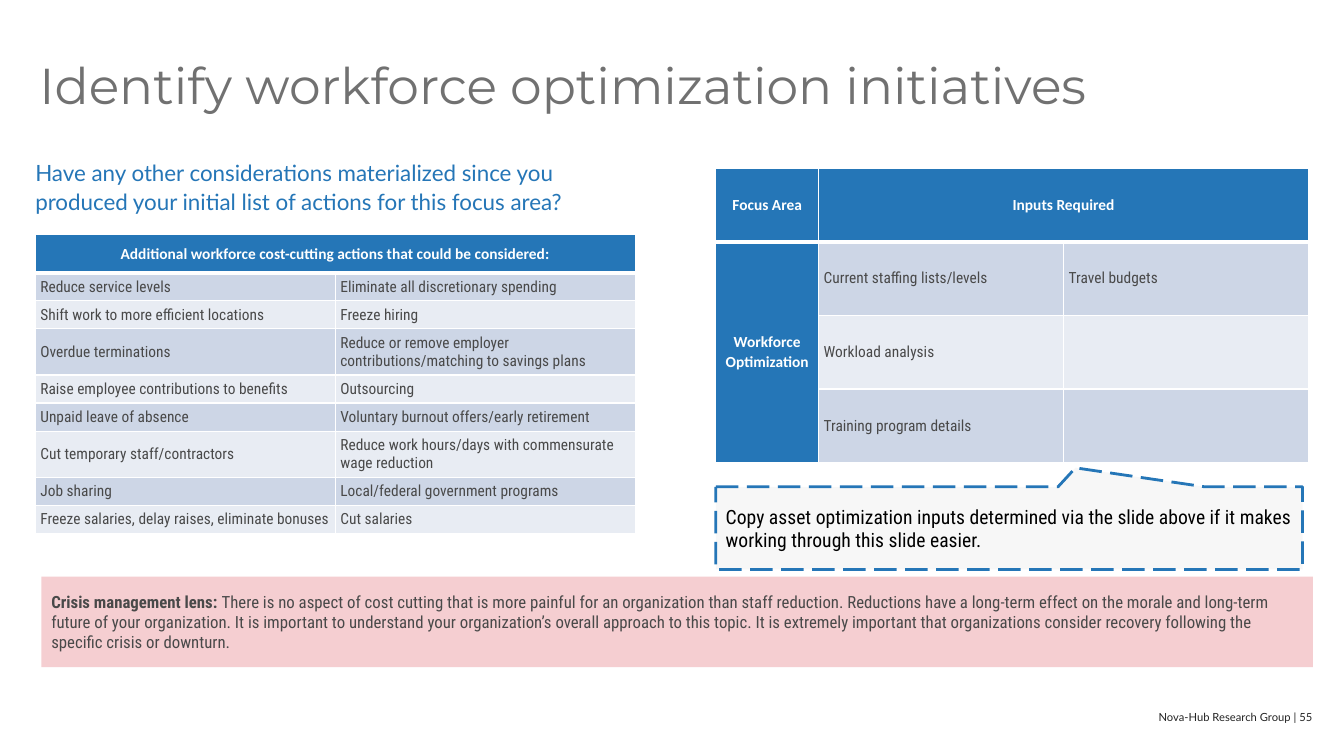
import pptx
import pptx.util
import pptx.oxml
import pptx.oxml.ns
import pptx.dml.color
import pptx.enum.text
import pptx.enum.dml
import pptx.enum.shapes

RGBColor = pptx.dml.color.RGBColor
Align = pptx.enum.text.PP_ALIGN
Anchor = pptx.enum.text.MSO_ANCHOR

WHITE = RGBColor(0xFF, 0xFF, 0xFF)
BLACK = RGBColor(0x00, 0x00, 0x00)
BLUE = RGBColor(0x25, 0x76, 0xB7)
TITLE_GREY = RGBColor(0x71, 0x71, 0x71)
TEXT_GREY = RGBColor(0x49, 0x49, 0x49)
FOOTER_GREY = RGBColor(0x24, 0x24, 0x24)
PALE_GREY = RGBColor(0xF2, 0xF2, 0xF2)
PINK = RGBColor(0xF5, 0xCE, 0xD1)
BANDS = (RGBColor(0xCD, 0xD6, 0xE6), RGBColor(0xE8, 0xEC, 0xF3))

HEADING_FONT, LEAD_FONT = "Montserrat", "Lato"
HEADER_FONT, BODY_FONT = "Calibri", "Roboto Condensed"

ACTIONS = [
    ("Additional workforce cost-cutting actions that could be considered:", ""),
    ("Reduce service levels", "Eliminate all discretionary spending"),
    ("Shift work to more efficient locations", "Freeze hiring"),
    ("Overdue terminations",
     "Reduce or remove employer contributions/matching to savings plans"),
    ("Raise employee contributions to benefits", "Outsourcing"),
    ("Unpaid leave of absence", "Voluntary burnout offers/early retirement"),
    ("Cut temporary staff/contractors",
     "Reduce work hours/days with commensurate wage reduction"),
    ("Job sharing", "Local/federal government programs"),
    ("Freeze salaries, delay raises, eliminate bonuses", "Cut salaries"),
]
INPUTS = [
    ("Focus Area", "Inputs Required", ""),
    ("Workforce Optimization", "Current staffing lists/levels", "Travel budgets"),
    ("", "Workload analysis", ""),
    ("", "Training program details", ""),
]


class SlideBuilder:
    """Holds the deck and its slide; places are percentages of the slide's size."""

    def __init__(self):
        self.deck = pptx.Presentation()
        self.deck.slide_width = pptx.util.Inches(13.33)
        self.deck.slide_height = pptx.util.Inches(7.5)
        self.slide = self.deck.slides.add_slide(self.deck.slide_layouts[5])

    def across(self, share):
        return round(self.deck.slide_width * share / 100)

    def down(self, share):
        return round(self.deck.slide_height * share / 100)

    def place(self, left, top, width, height):
        return self.across(left), self.down(top), self.across(width), self.down(height)

    def add_spans(self, frame, spans, font, size, color, align=Align.LEFT, spacing=None):
        para = frame.paragraphs[0]
        para.alignment = align
        if spacing:
            para.line_spacing = spacing
        for text, bold in spans:
            span = para.add_run()
            span.text = text
            span.font.name = font
            span.font.size = pptx.util.Pt(size)
            span.font.bold = bold
            span.font.color.rgb = color

    def plain_frame(self, box):
        frame = box.text_frame
        frame.word_wrap = True
        frame.auto_size = pptx.enum.text.MSO_AUTO_SIZE.NONE
        frame.vertical_anchor = Anchor.TOP
        frame.margin_left = frame.margin_right = 0
        frame.margin_top = frame.margin_bottom = 0
        return frame

    def title(self, place, text):
        box = self.slide.shapes.title
        box.left, box.top, box.width, box.height = self.place(*place)
        self.add_spans(self.plain_frame(box), [(text, False)], HEADING_FONT, 36,
                       TITLE_GREY, spacing=0.9)

    def text(self, place, text, size, color, **style):
        box = self.slide.shapes.add_textbox(*self.place(*place))
        self.add_spans(self.plain_frame(box), [(text, False)], LEAD_FONT, size, color,
                       **style)

    def panel(self, kind, place, fill, spans, size, color):
        shape = self.slide.shapes.add_shape(kind, *self.place(*place))
        shape.shadow.inherit = False
        shape.fill.solid()
        shape.fill.fore_color.rgb = fill
        shape.line.fill.background()
        shape.text_frame.vertical_anchor = Anchor.MIDDLE
        self.add_spans(shape.text_frame, spans, BODY_FONT, size, color)
        return shape

    def callout(self, place, tip, text):
        shape = self.panel(pptx.enum.shapes.MSO_SHAPE.RECTANGULAR_CALLOUT, place,
                           PALE_GREY, [(text, False)], 14, BLACK)
        shape.adjustments[0], shape.adjustments[1] = tip
        shape.line.color.rgb = BLUE
        shape.line.width = pptx.util.Pt(2)
        shape.line.dash_style = pptx.enum.dml.MSO_LINE.LONG_DASH
        fill_color = shape.element.spPr.find(".//" + pptx.oxml.ns.qn("a:srgbClr"))
        fill_color.append(pptx.oxml.parse_xml(
            f'<a:alpha {pptx.oxml.ns.nsdecls("a")} val="54000"/>'))

    def borders(self, cell, top, bottom):
        properties = cell._tc.get_or_add_tcPr()
        for side, points in (("L", 1), ("R", 1), ("T", top), ("B", bottom)):
            properties.append(pptx.oxml.parse_xml(
                f'<a:ln{side} {pptx.oxml.ns.nsdecls("a")} w="{pptx.util.Pt(points)}">'
                f'<a:solidFill><a:srgbClr val="{WHITE}"/></a:solidFill></a:ln{side}>'))

    def cell(self, cell, text, row, is_header):
        self.borders(cell, 3 if row == 1 else 1, 3 if row == 0 else 1)
        cell.fill.solid()
        cell.fill.fore_color.rgb = BLUE if is_header else BANDS[(row - 1) % 2]
        cell.vertical_anchor = Anchor.MIDDLE
        side, edge = (0.07, 0) if is_header else (0.05, 0.05)
        cell.margin_left = cell.margin_right = pptx.util.Inches(side)
        cell.margin_top = cell.margin_bottom = pptx.util.Inches(edge)
        if not text:
            return
        if is_header:
            self.add_spans(cell.text_frame, [(text, True)], HEADER_FONT, 11, WHITE,
                           Align.CENTER)
        else:
            self.add_spans(cell.text_frame, [(text, False)], BODY_FONT, 11, TEXT_GREY)

    def table(self, left, top, columns, rows, content, merges, header_columns=0):
        place = self.place(left, top, sum(columns), sum(rows))
        table = self.slide.shapes.add_table(len(rows), len(columns), *place).table
        table.horz_banding = False
        for column, share in zip(table.columns, columns):
            column.width = self.across(share)
        for row, share in zip(table.rows, rows):
            row.height = self.down(share)
        for row, texts in enumerate(content):
            for column, text in enumerate(texts):
                self.cell(table.cell(row, column), text, row,
                          row == 0 or column < header_columns)
        for first, last in merges:
            table.cell(*first).merge(table.cell(*last))


def main():
    page = SlideBuilder()

    # Heading and lead question
    page.title((2.93, 8, 92.2, 16.53), "Identify workforce optimization initiatives")
    page.text((2.63, 20.67, 44.64, 9.33),
              "Have any other considerations materialized since you produced "
              "your initial list of actions for this focus area?",
              16, BLUE, spacing=1.1)

    # Cost-cutting actions on the left, required inputs on the right
    page.table(2.63, 31.07, [22.32] * 2, [5] + [3.33] * 8, ACTIONS,
               merges=[((0, 0), (0, 1))])
    page.table(53.26, 22.27, [7.65, 18.23, 18.23], [9.73] * 4, INPUTS,
               merges=[((0, 1), (0, 2)), ((1, 0), (3, 0))], header_columns=1)

    # Callout pointing at the inputs
    page.callout((53.26, 64.4, 43.66, 10.93), (0.113, -0.73),
                 "Copy asset optimization inputs determined via the slide above "
                 "if it makes working through this slide easier.")

    # Crisis banner
    page.panel(pptx.enum.shapes.MSO_SHAPE.RECTANGLE, (3.08, 76.27, 94.6, 12), PINK, [
        ("Crisis management lens: ", True),
        ("There is no aspect of cost cutting that is more painful for an organization "
         "than staff reduction. Reductions have a long-term effect on the morale and "
         "long-term future of your organization. It is important to understand your "
         "organization’s overall approach to this topic. It is extremely important that "
         "organizations consider recovery following the specific crisis or downturn.",
         False)], 12, TEXT_GREY)

    # Footer
    page.text((72.17, 94, 25.5, 1.73), "Nova-Hub Research Group | 55", 8, FOOTER_GREY,
              align=Align.RIGHT)

    page.deck.save("out.pptx")


if __name__ == "__main__":
    main()
